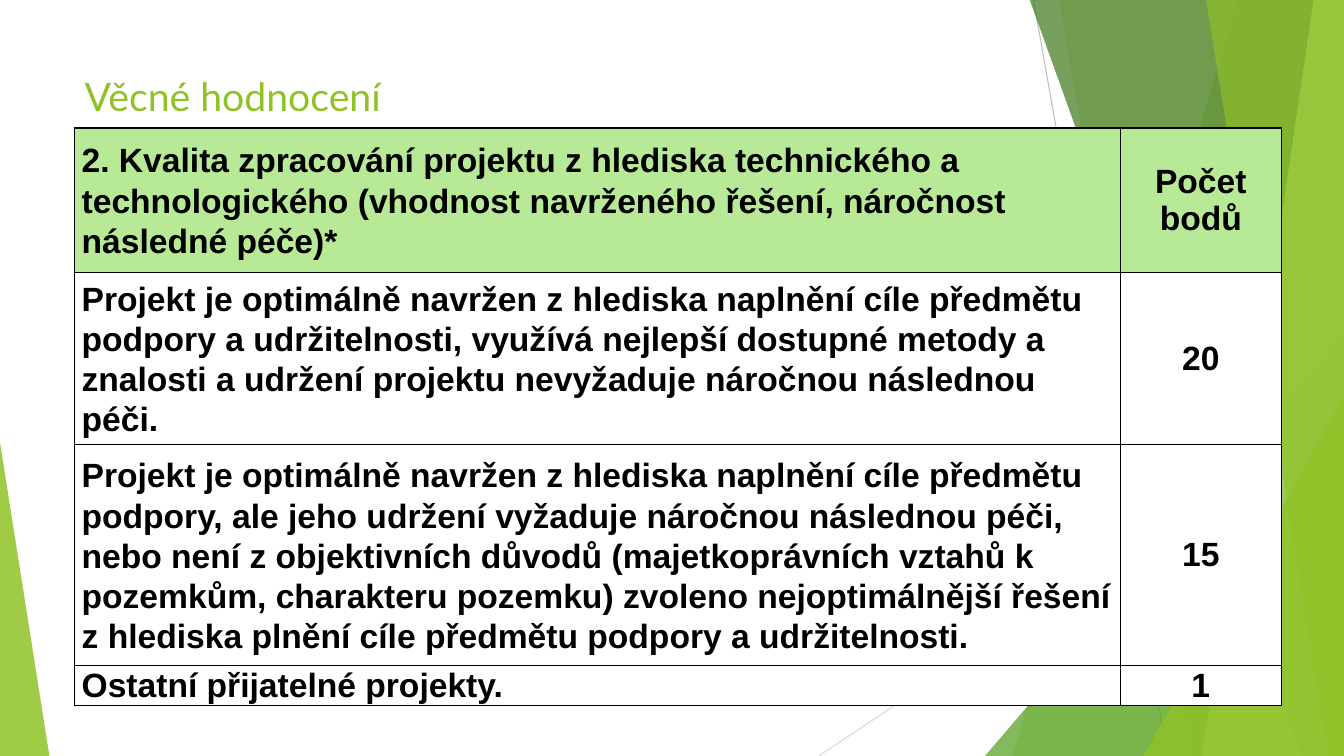
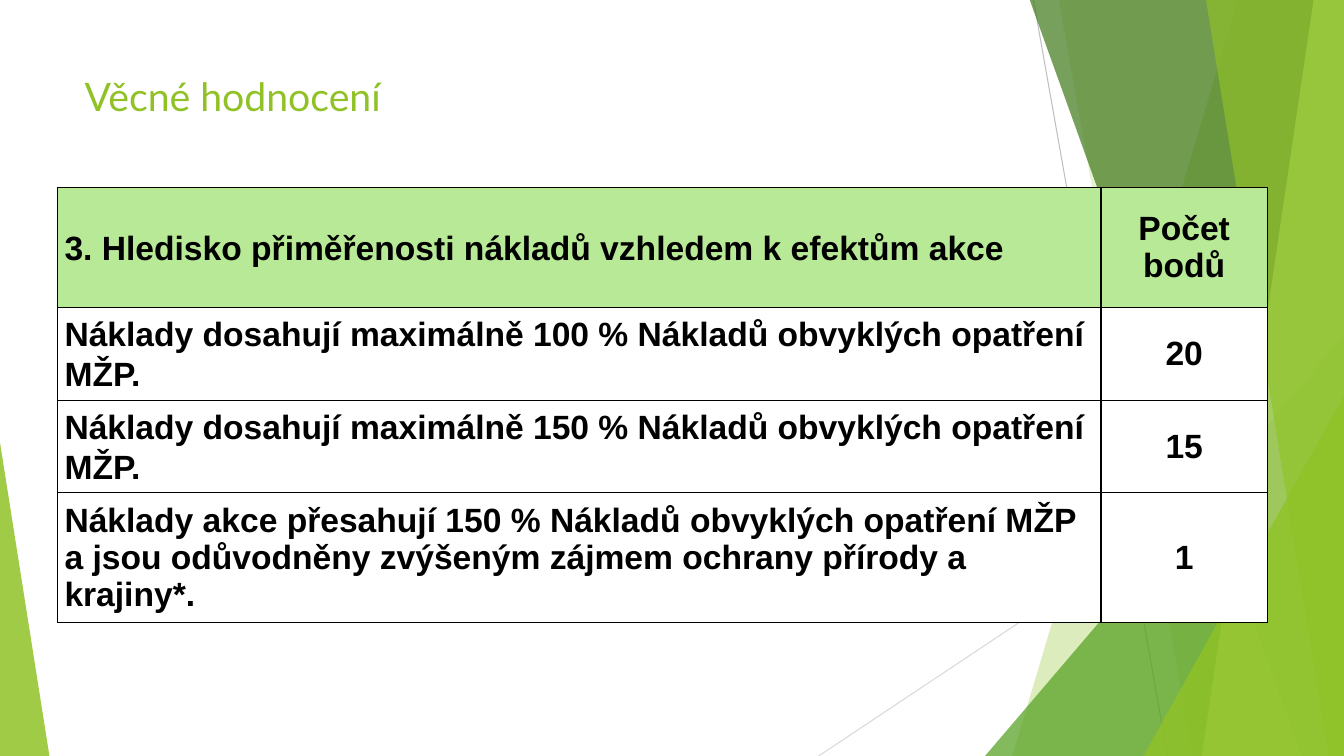
import pptx
import pptx.util
import pptx.dml.color
import pptx.enum.shapes
import pptx.enum.text
import pptx.oxml
import pptx.oxml.ns

Inches = pptx.util.Inches
Pt = pptx.util.Pt
RGBColor = pptx.dml.color.RGBColor
ALIGN = pptx.enum.text.PP_ALIGN
MIDDLE = pptx.enum.text.MSO_ANCHOR.MIDDLE
TRIANGLE = pptx.enum.shapes.MSO_SHAPE.ISOSCELES_TRIANGLE
STRAIGHT = pptx.enum.shapes.MSO_CONNECTOR.STRAIGHT

LIME = RGBColor(0x90, 0xC2, 0x26)
LEAF = RGBColor(0x54, 0xA0, 0x21)
MOSS = RGBColor(0x3F, 0x78, 0x19)
PALE = RGBColor(0xC0, 0xE4, 0x74)
MINT = RGBColor(0xB7, 0xE9, 0x96)
GRAY = RGBColor(0xBF, 0xBF, 0xBF)
MIST = RGBColor(0xD9, 0xD9, 0xD9)
BLACK = RGBColor(0, 0, 0)
WHITE = RGBColor(255, 255, 255)

WIDE, HIGH = 13.33, 7.5
TOP = -0.01
INSET = 0.07
POINTS = "Počet bodů"


def element(tag, **attrs):
    node = pptx.oxml.parse_xml(f"<a:{tag} {pptx.oxml.ns.nsdecls('a')}/>")
    for key, value in attrs.items():
        node.set(key, str(value))
    return node


def write(frame, text, size=24, font="Arial", color=BLACK, bold=False,
          align=ALIGN.LEFT, spacing=1.0):
    frame.word_wrap = True
    para = frame.paragraphs[0]
    para.alignment = align
    para.line_spacing = spacing
    run = para.add_run()
    run.text = text
    run.font.size = Pt(size)
    run.font.name = font
    run.font.bold = bold
    run.font.color.rgb = color


def paint(shape, color, alpha):
    shape.shadow.inherit = False
    shape.line.fill.background()
    shape.fill.solid()
    shape.fill.fore_color.rgb = color
    tone = shape.fill._xPr.find(".//" + pptx.oxml.ns.qn("a:srgbClr"))
    tone.append(element("alpha", val=alpha * 1000))


def rule(slide, start, end, color):
    line = slide.shapes.add_connector(STRAIGHT, *map(Inches, start + end))
    line.line.color.rgb = color
    line.line.width = Pt(0.75)
    line._element.spPr.append(element("effectLst"))


def band(slide, upper, lower, color, alpha):
    points = [(upper, TOP), (WIDE, TOP), (WIDE, HIGH), (lower, HIGH)]
    spots = [(Inches(x), Inches(y)) for x, y in points]
    build = slide.shapes.build_freeform(*spots[0])
    build.add_line_segments(spots[1:], close=True)
    paint(build.convert_to_shape(), color, alpha)


def peak(slide, left, top, width, tip, color, alpha):
    box = map(Inches, (left, top, width, HIGH - top))
    shape = slide.shapes.add_shape(TRIANGLE, *box)
    shape.adjustments[0] = tip
    paint(shape, color, alpha)


def decor(slide):
    rule(slide, (10.25, 0), (11.58, HIGH), GRAY)
    rule(slide, (WIDE, 4.03), (8.12, HIGH), MIST)
    band(slide, 12.28, 10.04, LIME, 30)
    band(slide, 10.5, 11.83, LIME, 20)
    peak(slide, 9.77, 3.33, 3.56, 1, LEAF, 72)
    band(slide, 10.21, 12.91, MOSS, 70)
    band(slide, 13.03, 11.92, PALE, 70)
    band(slide, 11.96, 13.18, LIME, 65)
    peak(slide, 11.34, 3.93, 1.99, 1, LIME, 80)
    peak(slide, 0, 4.39, 0.49, 0, LIME, 85)


def title(slide, text, left=0.74, top=0.67, width=9.4, height=1.44):
    box = slide.shapes.add_textbox(*map(Inches, (left, top, width, height)))
    write(box.text_frame, text, size=28, font="Lato", color=LIME)


def border(cell):
    props = cell._tc.get_or_add_tcPr()
    for spot, side in enumerate(("lnL", "lnR", "lnT", "lnB")):
        edge = element(side, w=Pt(1))
        fill = element("solidFill")
        fill.append(element("srgbClr", val=BLACK))
        edge.append(fill)
        props.insert(spot, edge)


def fill_cell(cell, text, color, **style):
    cell.margin_left = cell.margin_right = Inches(INSET)
    cell.margin_top = cell.margin_bottom = 0
    cell.vertical_anchor = MIDDLE
    cell.fill.solid()
    cell.fill.fore_color.rgb = color
    border(cell)
    write(cell.text_frame, text, bold=True, **style)


def scores(slide, left, top, widths, heights, rows):
    box = map(Inches, (left, top, sum(widths), sum(heights)))
    table = slide.shapes.add_table(len(rows), len(widths), *box).table
    table.first_row = table.horz_banding = False
    for col, width in zip(table.columns, widths):
        col.width = Inches(width)
    for i, (height, (text, score)) in enumerate(zip(heights, rows)):
        table.rows[i].height = Inches(height)
        color = WHITE if i else MINT
        spacing = 1.0 if i == len(rows) - 1 else 1.07
        fill_cell(table.cell(i, 0), text, color, spacing=spacing)
        fill_cell(table.cell(i, 1), score, color, align=ALIGN.CENTER)


def page(deck, **grid):
    slide = deck.slides.add_slide(deck.slide_layouts[6])
    decor(slide)
    title(slide, "Věcné hodnocení")
    scores(slide, **grid)


def main():
    deck = pptx.Presentation()
    deck.slide_width = Inches(WIDE)
    deck.slide_height = Inches(HIGH)
    page(deck, left=0.74, top=1.27, widths=(10.37, 1.6),
         heights=(1.43, 1.46, 2.19, 0.35), rows=[
             ("2. Kvalita zpracování projektu z hlediska technického a "
              "technologického (vhodnost navrženého řešení, náročnost "
              "následné péče)*", POINTS),
             ("Projekt je optimálně navržen z hlediska naplnění cíle předmětu "
              "podpory a udržitelnosti, využívá nejlepší dostupné metody a "
              "znalosti a udržení projektu nevyžaduje náročnou následnou "
              "péči.", "20"),
             ("Projekt je optimálně navržen z hlediska naplnění cíle předmětu "
              "podpory, ale jeho udržení vyžaduje náročnou následnou péči, "
              "nebo není z objektivních důvodů (majetkoprávních vztahů "
              "k pozemkům, charakteru pozemku) zvoleno nejoptimálnější "
              "řešení z hlediska plnění cíle předmětu podpory a "
              "udržitelnosti.", "15"),
             ("Ostatní přijatelné projekty.", "1")])
    page(deck, left=0.57, top=1.86, widths=(10.35, 1.65),
         heights=(1.19, 0.92, 0.92, 1.29), rows=[
             ("3. Hledisko přiměřenosti nákladů vzhledem k efektům akce",
              POINTS),
             ("Náklady dosahují maximálně 100 % Nákladů obvyklých opatření "
              "MŽP.", "20"),
             ("Náklady dosahují maximálně 150 % Nákladů obvyklých opatření "
              "MŽP.", "15"),
             ("Náklady akce přesahují 150 % Nákladů obvyklých opatření MŽP "
              "a jsou odůvodněny zvýšeným zájmem ochrany přírody a "
              "krajiny*.", "1")])
    deck.save("out.pptx")


if __name__ == "__main__":
    main()
